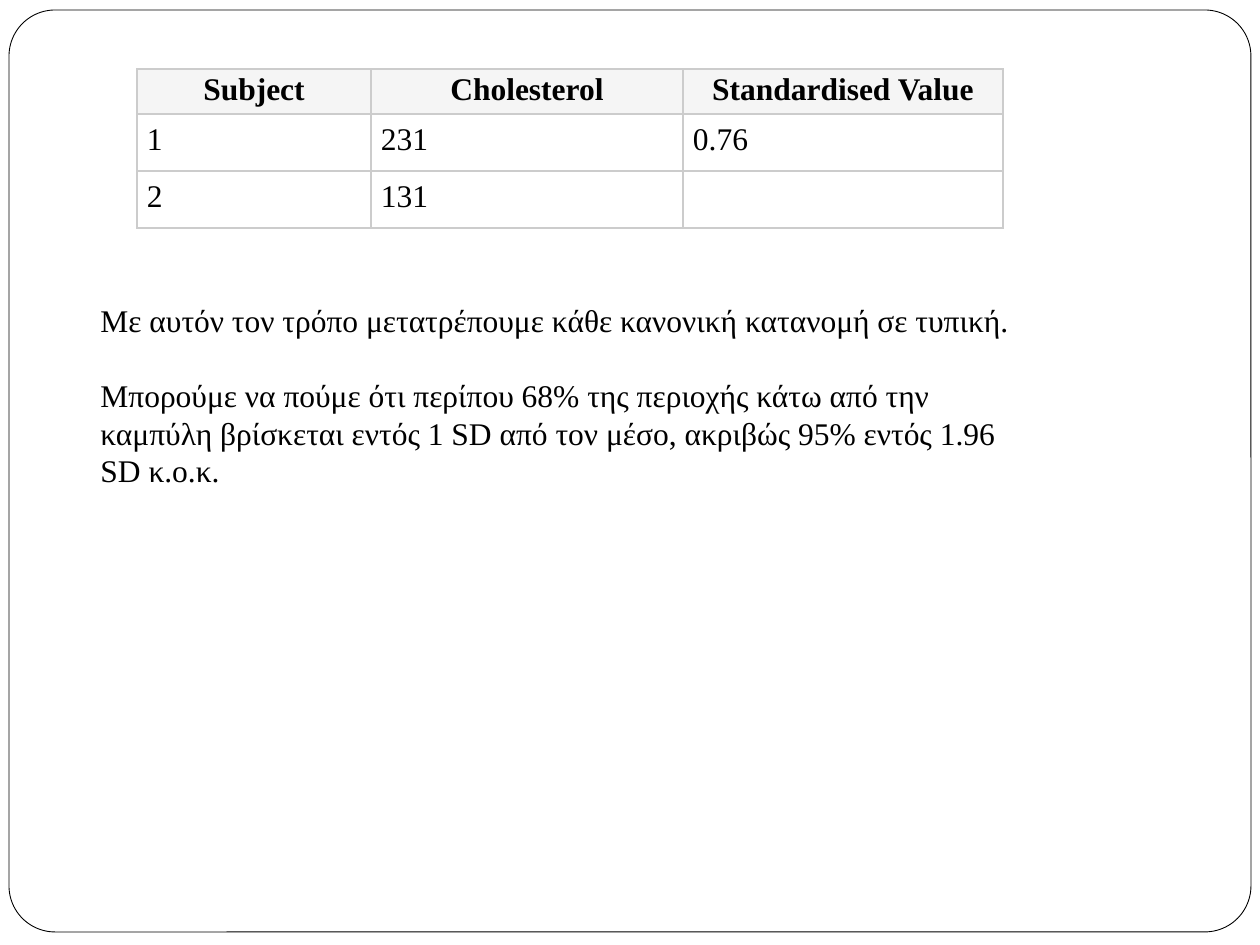
from lxml import etree
from pptx import Presentation
from pptx import util as u
from pptx.dml.color import RGBColor
from pptx.enum import shapes, text
from pptx.oxml.ns import qn

PX = 914400 / 126  # EMU in one px


def px(*lengths):
    return [u.Emu(round(n * PX)) for n in lengths]


def color(hex_string):
    return RGBColor.from_string(hex_string)


BODY_FONT = {"name": "Times New Roman", "size": u.Pt(18)}

prs = Presentation()
prs.slide_width, prs.slide_height = px(1260, 945)
slide = prs.slides.add_slide(prs.slide_layouts[6])

# Rounded frame around the slide
frame = slide.shapes.add_shape(
    shapes.MSO_SHAPE.ROUNDED_RECTANGLE, *px(9, 10, 1242, 922))
frame.adjustments[0] = 0.05
frame.shadow.inherit = False
frame.fill.solid()
frame.fill.fore_color.rgb = color("FFFFFF")
frame.line.color.rgb = color("000000")
frame.line.width = u.Pt(0.5)

# Cholesterol table
rows = [
    ["Subject", "Cholesterol", "Standardised Value"],
    ["1", "231", "0.76"],
    ["2", "131", ""],
]
col_widths = px(234, 312, 320)
row_heights = px(45, 57, 57)
measures = slide.shapes.add_table(
    3, 3, *px(137, 69), sum(col_widths), sum(row_heights)).table
for column, width in zip(measures.columns, col_widths):
    column.width = width
for row, height in zip(measures.rows, row_heights):
    row.height = height

for r, values in enumerate(rows):
    header = r == 0
    margin_x, margin_y = px(3, 3) if header else px(10, 8)
    cell_format = {
        "margin_left": margin_x, "margin_right": margin_x,
        "margin_top": margin_y, "margin_bottom": margin_y,
    }
    for c, value in enumerate(values):
        cell = measures.cell(r, c)
        cell.text = value
        for key, setting in cell_format.items():
            setattr(cell, key, setting)
        paragraph = cell.text_frame.paragraphs[0]
        paragraph.alignment = (
            text.PP_ALIGN.CENTER if header else text.PP_ALIGN.LEFT)
        for key, setting in {**BODY_FONT, "bold": header}.items():
            setattr(paragraph.font, key, setting)
        paragraph.font.color.rgb = color("000000")

        # Borders come before the fill in the cell properties
        properties = cell._tc.get_or_add_tcPr()
        for side in ("a:lnL", "a:lnR", "a:lnT", "a:lnB"):
            border = etree.SubElement(properties, qn(side), w=str(u.Pt(0.75)))
            line_fill = etree.SubElement(border, qn("a:solidFill"))
            etree.SubElement(line_fill, qn("a:srgbClr"), val="CCCCCC")
        cell.fill.solid()
        cell.fill.fore_color.rgb = color("F5F5F5" if header else "FFFFFF")

# Explanation below the table
explanation = [
    "Με αυτόν τον τρόπο μετατρέπουμε κάθε κανονική κατανομή σε τυπική.",
    "Μπορούμε να πούμε ότι περίπου 68% της περιοχής κάτω από την καμπύλη "
    "βρίσκεται εντός 1 SD από τον μέσο, ακριβώς 95% εντός 1.96 SD κ.ο.κ.",
]
notes_frame = slide.shapes.add_textbox(*px(88, 295, 965, 242)).text_frame
notes_frame.word_wrap = True
notes_frame.auto_size = text.MSO_AUTO_SIZE.SHAPE_TO_FIT_TEXT
for i, sentence in enumerate(explanation):
    paragraph = notes_frame.add_paragraph() if i else notes_frame.paragraphs[0]
    paragraph.text = sentence
    paragraph.space_before = u.Pt(21 if i else 0)
    for key, setting in BODY_FONT.items():
        setattr(paragraph.font, key, setting)
    paragraph.font.color.rgb = color("000000")

prs.save("out.pptx")
